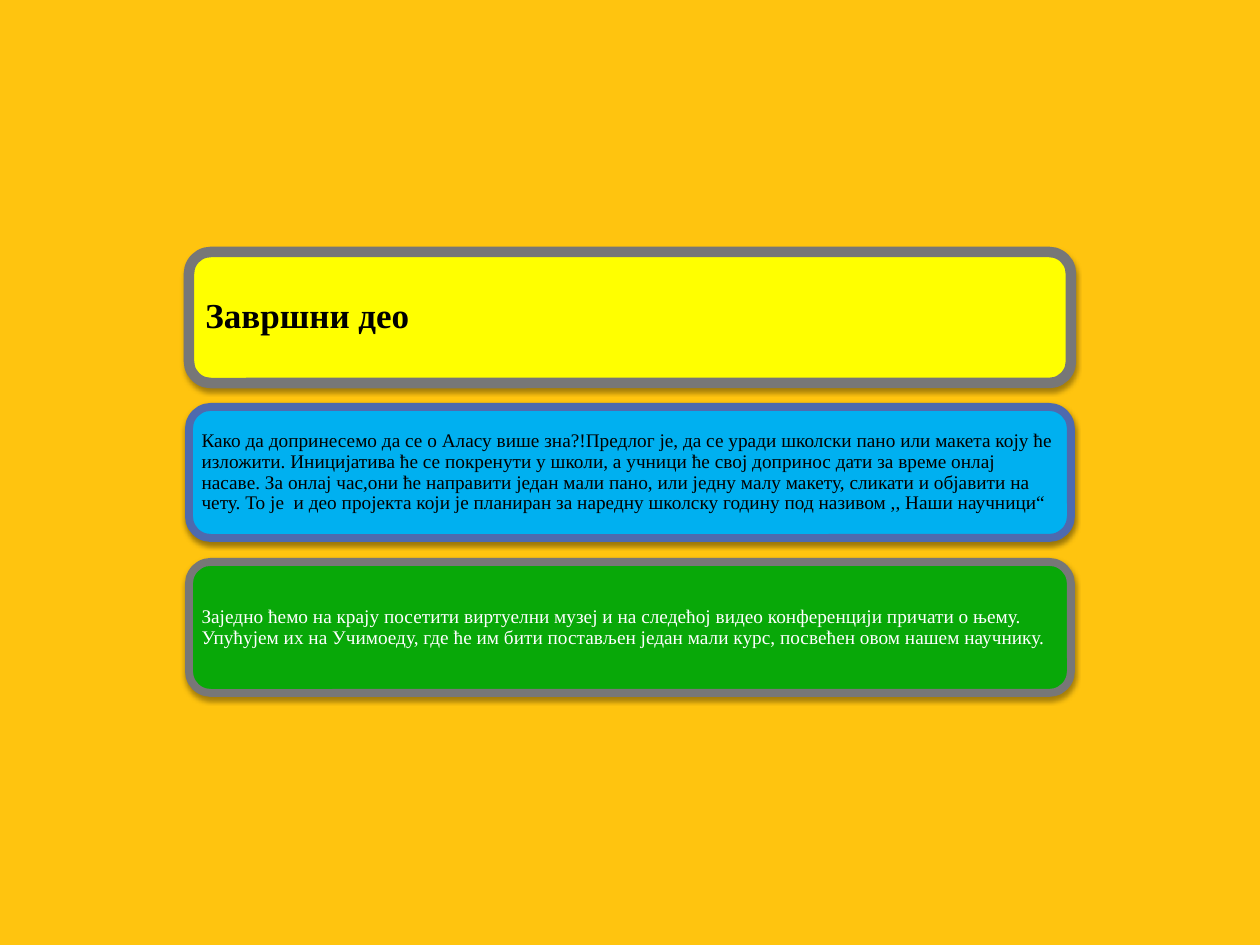
from dataclasses import dataclass

from lxml.etree import SubElement
from pptx import Presentation
from pptx.dml.color import RGBColor
from pptx.enum.shapes import MSO_SHAPE
from pptx.enum.text import MSO_ANCHOR, MSO_AUTO_SIZE, PP_ALIGN
from pptx.oxml.ns import qn
from pptx.shapes.base import BaseShape
from pptx.slide import Slide
from pptx.util import Inches, Pt

AMBER = RGBColor(0xFF, 0xC4, 0x0F)
YELLOW = RGBColor(0xFF, 0xFF, 0x00)
SKY = RGBColor(0x00, 0xB0, 0xF0)
GREEN = RGBColor(0x08, 0xA8, 0x08)
GREY = RGBColor(0x77, 0x77, 0x77)
INDIGO = RGBColor(0x4E, 0x6A, 0xAE)
BLACK = RGBColor(0x00, 0x00, 0x00)
WHITE = RGBColor(0xFF, 0xFF, 0xFF)

# One column of equal rows, in inches
COLUMN_LEFT, COLUMN_WIDTH = 1.5, 7
FIRST_TOP, ROW_HEIGHT, ROW_PITCH = 2, 1.04, 1.23
TEXT_MARGIN = 0.05


@dataclass
class Panel:
    text: str
    fill: RGBColor
    border: RGBColor
    text_color: RGBColor = BLACK
    border_width: float = 4.5
    shadow_opacity: int = 35
    shadow_distance: float = 1.8
    font_size: int = 11
    inset: float = 0.05
    is_title: bool = False


PANELS = [
    Panel("Завршни део", YELLOW, GREY, border_width=6,
          font_size=20, inset=0.08, is_title=True),
    Panel("Како да допринесемо да се о Аласу више зна?!Предлог је, да се уради "
          "школски пано или макета коју ће изложити. Иницијатива ће се покренути "
          "у школи, а учници ће свој допринос дати за време онлај насаве. За онлај "
          "час,они ће направити један мали пано, или једну малу макету, сликати и "
          "објавити на чету. То је  и део пројекта који је планиран за наредну "
          "школску годину под називом ,, Наши научници“",
          SKY, INDIGO, shadow_opacity=38, shadow_distance=1.6),
    Panel("Заједно ћемо на крају посетити виртуелни музеј и на следећој видео "
          "конференцији причати о њему. Упућујем их на Учимоеду, где ће им бити "
          "постављен један мали курс, посвећен овом нашем научнику.",
          GREEN, GREY, text_color=WHITE),
]


def set_attributes(target: object, values: dict) -> None:
    for name, value in values.items():
        setattr(target, name, value)


def add_shadow(shape: BaseShape, panel: Panel) -> None:
    """Give the shape a soft shadow that falls straight down."""
    effects = SubElement(shape._element.spPr, qn("a:effectLst"))
    shadow = SubElement(effects, qn("a:outerShdw"), {
        "blurRad": str(Pt(3.1)), "dist": str(Pt(panel.shadow_distance)),
        "dir": "5400000", "rotWithShape": "0"})
    color = SubElement(shadow, qn("a:srgbClr"), val=str(BLACK))
    SubElement(color, qn("a:alpha"), val=str(panel.shadow_opacity * 1000))


def add_card(slide: Slide, panel: Panel, top: float) -> None:
    card = slide.shapes.add_shape(
        MSO_SHAPE.ROUNDED_RECTANGLE, Inches(COLUMN_LEFT), Inches(top),
        Inches(COLUMN_WIDTH), Inches(ROW_HEIGHT))
    card.fill.solid()
    card.fill.fore_color.rgb = panel.fill
    card.line.color.rgb = panel.border
    card.line.width = Pt(panel.border_width)
    add_shadow(card, panel)


def add_text(slide: Slide, panel: Panel, top: float) -> None:
    place = {
        "left": Inches(COLUMN_LEFT + TEXT_MARGIN),
        "top": Inches(top + TEXT_MARGIN),
        "width": Inches(COLUMN_WIDTH - 2 * TEXT_MARGIN),
        "height": Inches(ROW_HEIGHT - 2 * TEXT_MARGIN),
    }
    if panel.is_title:
        box = slide.shapes.title
        set_attributes(box, place)
        # Bring the title in front of its card
        slide.shapes._spTree.append(box._element)
    else:
        box = slide.shapes.add_textbox(*place.values())

    frame = box.text_frame
    frame.text = panel.text
    set_attributes(frame, {
        "word_wrap": True, "auto_size": MSO_AUTO_SIZE.NONE,
        "vertical_anchor": MSO_ANCHOR.MIDDLE})
    set_attributes(frame, {f"margin_{side}": Inches(panel.inset)
                           for side in ("left", "top", "right", "bottom")})
    paragraph = frame.paragraphs[0]
    set_attributes(paragraph, {"alignment": PP_ALIGN.LEFT, "line_spacing": 0.9})
    font = paragraph.runs[0].font
    set_attributes(font, {"name": "Times New Roman", "size": Pt(panel.font_size),
                          "bold": panel.is_title})
    font.color.rgb = panel.text_color


def main() -> None:
    presentation = Presentation()
    set_attributes(presentation, {"slide_width": Inches(10),
                                  "slide_height": Inches(7.5)})
    title_only = presentation.slide_layouts[5]
    slide = presentation.slides.add_slide(title_only)

    # Background
    slide.background.fill.solid()
    slide.background.fill.fore_color.rgb = AMBER

    # Stacked panels
    for row, panel in enumerate(PANELS):
        top = FIRST_TOP + row * ROW_PITCH
        add_card(slide, panel, top)
        add_text(slide, panel, top)

    presentation.save("out.pptx")


if __name__ == "__main__":
    main()
